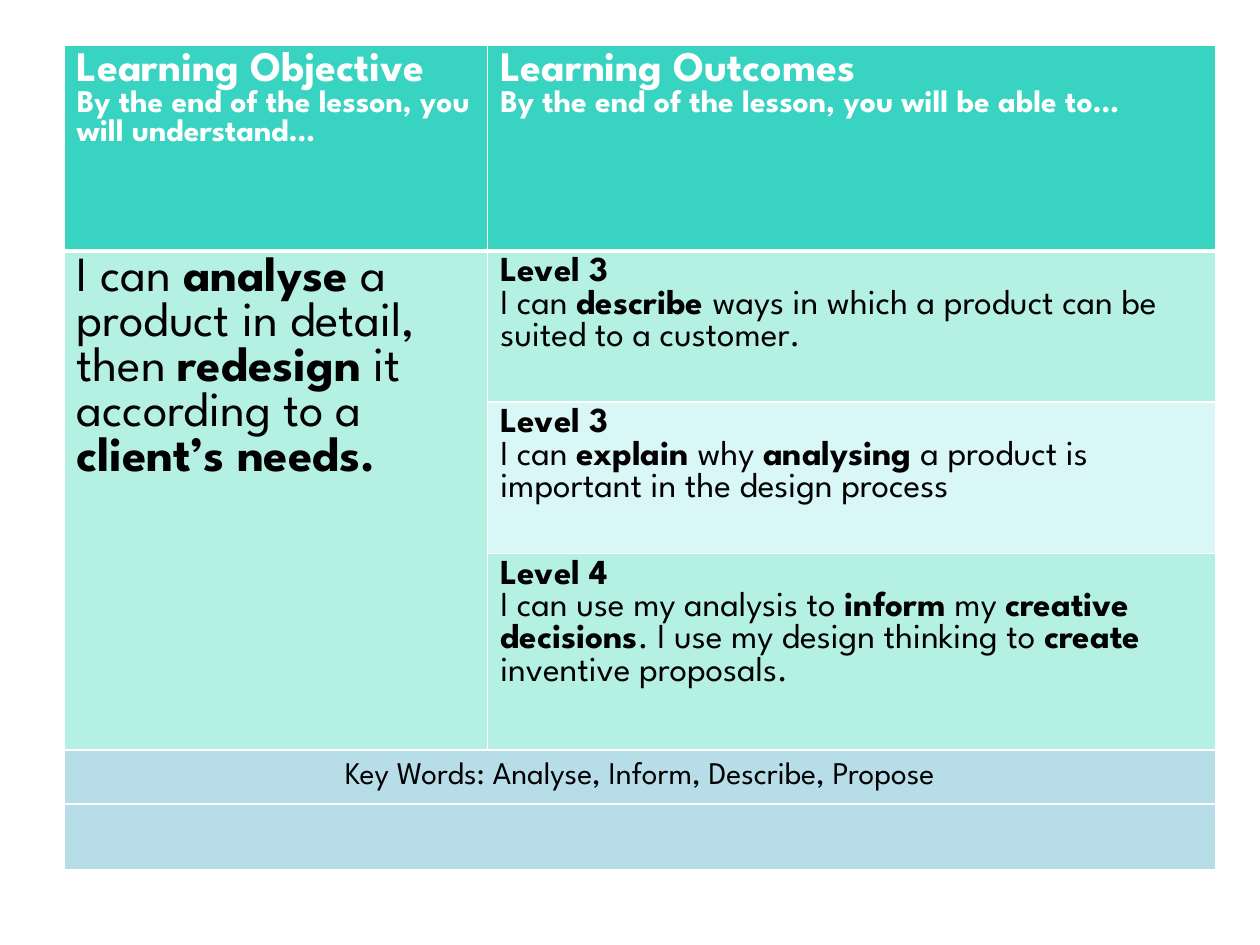
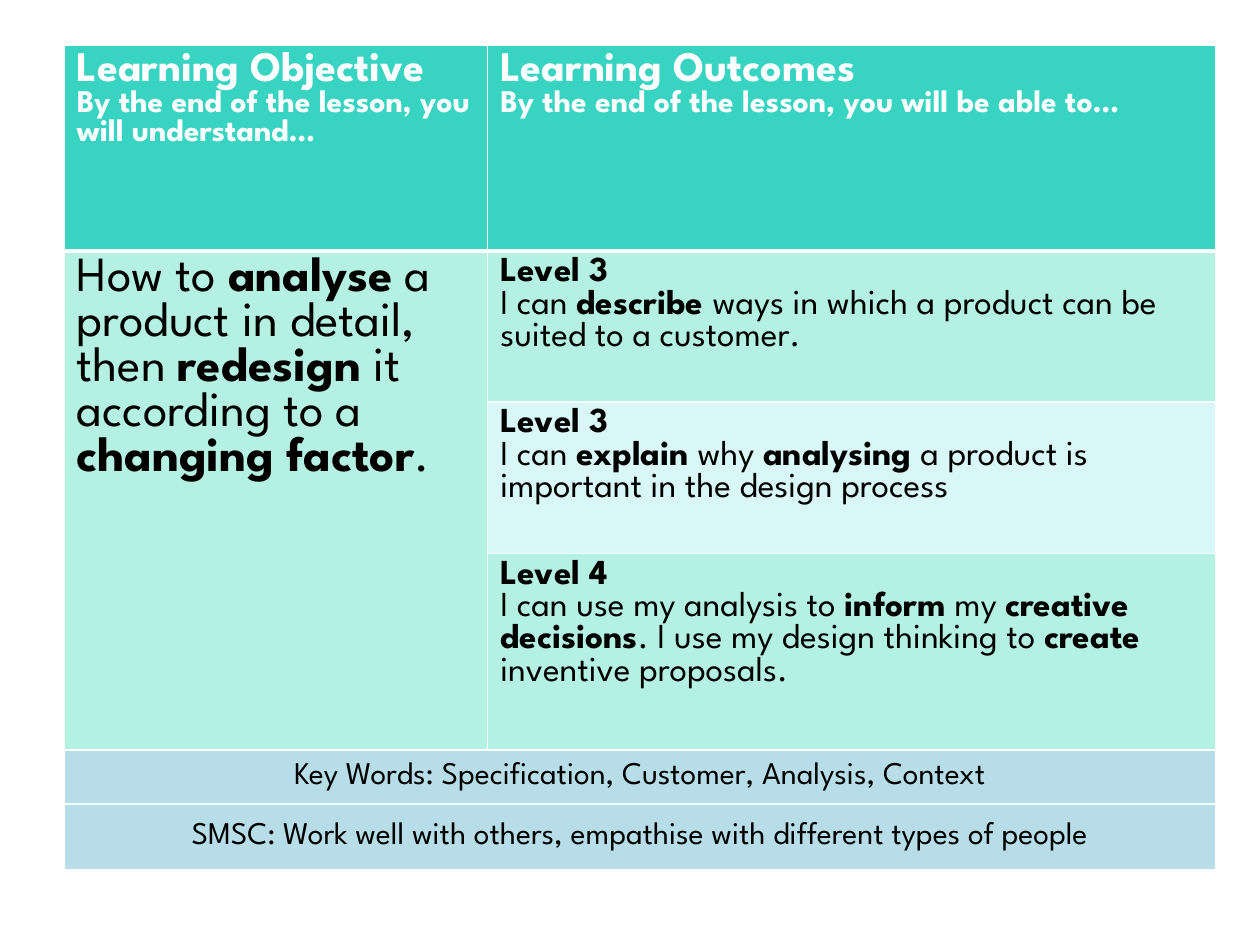
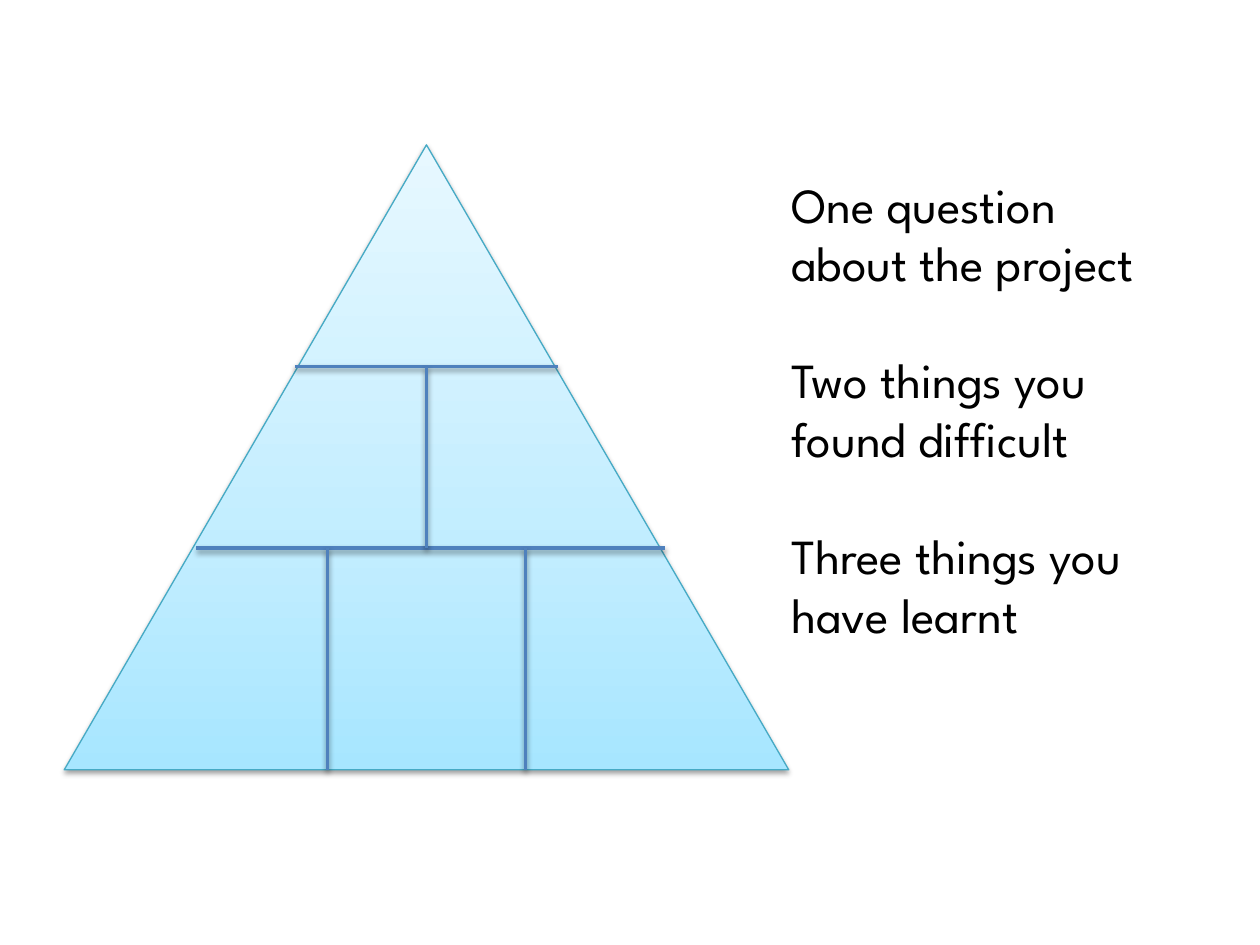
from lxml.etree import SubElement
from pptx import Presentation
from pptx.dml.color import RGBColor
from pptx.enum.shapes import MSO_CONNECTOR as Connector, MSO_SHAPE as Shape
from pptx.enum.text import MSO_ANCHOR as Anchor, PP_ALIGN as Align
from pptx.oxml.ns import qn
from pptx.util import Pt

FONT = "League Spartan"
WHITE = RGBColor(0xFF, 0xFF, 0xFF)
BLACK = RGBColor(0x00, 0x00, 0x00)
HEADER_TEAL = RGBColor(0x38, 0xD4, 0xC1)
MINT = RGBColor(0xB5, 0xF1, 0xE3)
PALE_AQUA = RGBColor(0xD9, 0xF7, 0xF6)
FOOTER_BLUE = RGBColor(0xB7, 0xDE, 0xE8)
PYRAMID_EDGE = RGBColor(0x46, 0xAA, 0xC5)
DIVIDER_BLUE = RGBColor(0x4F, 0x81, 0xBD)
PYRAMID_STOPS = [
    (0, RGBColor(0xA7, 0xE6, 0xFF)),
    (35, RGBColor(0xC1, 0xED, 0xFF)),
    (100, RGBColor(0xE7, 0xF8, 0xFF)),
]

LEFT = 36.7
TABLE_TOP = 26
COLUMN_WIDTHS = [242, 416]
ROW_HEIGHTS = [117.4, 86.4, 86.4, 112.3, 31, 37.4]
ROW_FILLS = [HEADER_TEAL, MINT, PALE_AQUA, MINT, FOOTER_BLUE, FOOTER_BLUE]

HEADINGS = [
    ("Learning Objective", "By the end of the lesson, you will understand…"),
    ("Learning Outcomes", "By the end of the lesson, you will be able to…"),
]
OUTCOMES = [
    ("Level 3", "I can *describe *ways in which a product can be suited to a customer."),
    ("Level 3", "I can *explain* why *analysing* a product is important in the design process"),
    ("Level 4", "I can use my analysis to *inform* my *creative decisions*. "
                "I use my design thinking to *create* inventive proposals."),
]
LESSONS = [
    ("I can *analyse *a product in detail, then *redesign* it according to a *client’s needs.*",
     ["Key Words: Analyse, Inform, Describe, Propose"]),
    ("How to *analyse* a product in detail, then *redesign* it according to a *changing factor*.",
     ["Key Words: Specification, Customer, Analysis, Context",
      "SMSC: Work well with others, empathise with different types of people"]),
]
PROMPTS = [
    "One question about the project",
    "Two things you found difficult",
    "Three things you have learnt",
]


def add_runs(paragraph, marked_text, size, color=BLACK):
    for index, text in enumerate(marked_text.split("*")):
        if text:
            run = paragraph.add_run()
            run.text = text
            run.font.name = FONT
            run.font.size = Pt(size)
            run.font.bold = index % 2 == 1
            run.font.color.rgb = color


def add_heading(cell, heading, body, heading_size, body_size, color=BLACK):
    add_runs(cell.text_frame.paragraphs[0], f"*{heading}*", heading_size, color)
    add_runs(cell.text_frame.add_paragraph(), body, body_size, color)


def set_borders(cell, top, bottom):
    properties = cell._tc.get_or_add_tcPr()
    for side, width in (("L", 1), ("R", 1), ("T", top), ("B", bottom)):
        line = SubElement(properties, qn(f"a:ln{side}"), w=str(Pt(width)))
        fill = SubElement(line, qn("a:solidFill"))
        SubElement(fill, qn("a:srgbClr"), val=str(WHITE))


def add_lesson_table(slide, objective, footers):
    frame = slide.shapes.add_table(
        len(ROW_HEIGHTS), len(COLUMN_WIDTHS), Pt(LEFT), Pt(TABLE_TOP),
        Pt(sum(COLUMN_WIDTHS)), Pt(sum(ROW_HEIGHTS)))
    table = frame.table
    table.first_row = table.horz_banding = False
    for column, width in zip(table.columns, COLUMN_WIDTHS):
        column.width = Pt(width)
    for index, (row, height) in enumerate(zip(table.rows, ROW_HEIGHTS)):
        row.height = Pt(height)
        for cell in row.cells:
            set_borders(cell, 3 if index == 1 else 1, 3 if index == 0 else 1)
            cell.fill.solid()
            cell.fill.fore_color.rgb = ROW_FILLS[index]

    for column, (heading, lead_in) in enumerate(HEADINGS):
        add_heading(table.cell(0, column), heading, f"*{lead_in}*", 24, 18, WHITE)
    table.cell(1, 0).merge(table.cell(3, 0))
    add_runs(table.cell(1, 0).text_frame.paragraphs[0], objective, 28)
    for row, (level, outcome) in enumerate(OUTCOMES, 1):
        add_heading(table.cell(row, 1), level, outcome, 20, 20)
    for row in (4, 5):
        table.cell(row, 0).merge(table.cell(row, 1))
    for row, footer in enumerate(footers, 4):
        cell = table.cell(row, 0)
        cell.vertical_anchor = Anchor.MIDDLE
        paragraph = cell.text_frame.paragraphs[0]
        paragraph.alignment = Align.CENTER
        add_runs(paragraph, footer, 18)


def add_soft_shadow(shape):
    effects = SubElement(shape._element.spPr, qn("a:effectLst"))
    shadow = SubElement(effects, qn("a:outerShdw"), blurRad=str(Pt(3.1)),
                        dist=str(Pt(1.6)), dir="5400000", rotWithShape="0")
    color = SubElement(shadow, qn("a:srgbClr"), val=str(BLACK))
    SubElement(color, qn("a:alpha"), val="38000")


def add_pyramid(slide, left, top, width, height):
    pyramid = slide.shapes.add_shape(
        Shape.ISOSCELES_TRIANGLE, Pt(left), Pt(top), Pt(width), Pt(height))
    pyramid.fill.gradient()
    pyramid.fill.gradient_angle = 90
    stops = pyramid._element.spPr.find(f".//{qn('a:gsLst')}")
    for stop in list(stops):
        stops.remove(stop)
    for position, color in PYRAMID_STOPS:
        stop = SubElement(stops, qn("a:gs"), pos=str(position * 1000))
        SubElement(stop, qn("a:srgbClr"), val=str(color))
    pyramid.line.color.rgb = PYRAMID_EDGE
    pyramid.line.width = Pt(0.75)
    add_soft_shadow(pyramid)


def add_divider(slide, start_x, start_y, end_x, end_y):
    divider = slide.shapes.add_connector(
        Connector.STRAIGHT, Pt(start_x), Pt(start_y), Pt(end_x), Pt(end_y))
    divider.line.color.rgb = DIVIDER_BLUE
    divider.line.width = Pt(2)
    add_soft_shadow(divider)


def add_prompts(slide, left, top, width, height):
    line_height = 33.5
    frame = slide.shapes.add_textbox(Pt(left), Pt(top), Pt(width), Pt(height)).text_frame
    frame.word_wrap = True
    frame.margin_top = Pt(5.3)
    for index, prompt in enumerate(PROMPTS):
        paragraph = frame.add_paragraph() if index else frame.paragraphs[0]
        paragraph.line_spacing = Pt(line_height)
        if index:
            paragraph.space_before = Pt(line_height)
        add_runs(paragraph, prompt, 28)


def add_reflection(slide):
    top, height = 82.8, 357.1
    upper, lower, base = 209.5, 313.2, top + height
    add_pyramid(slide, LEFT, top, 414, height)
    add_divider(slide, 168.5, upper, 319, upper)
    add_divider(slide, 112.3, lower, 380.2, lower)
    add_divider(slide, 243.7, upper, 243.7, lower)
    for x in (187.2, 300.2):
        add_divider(slide, x, lower, x, base)
    add_prompts(slide, 445, 94.3, 232.6, 312.5)


def main():
    presentation = Presentation()
    presentation.slide_width = Pt(720)
    presentation.slide_height = Pt(540)
    blank = presentation.slide_layouts[6]
    for objective, footers in LESSONS:
        add_lesson_table(presentation.slides.add_slide(blank), objective, footers)
    add_reflection(presentation.slides.add_slide(blank))
    presentation.save("out.pptx")


if __name__ == "__main__":
    main()
